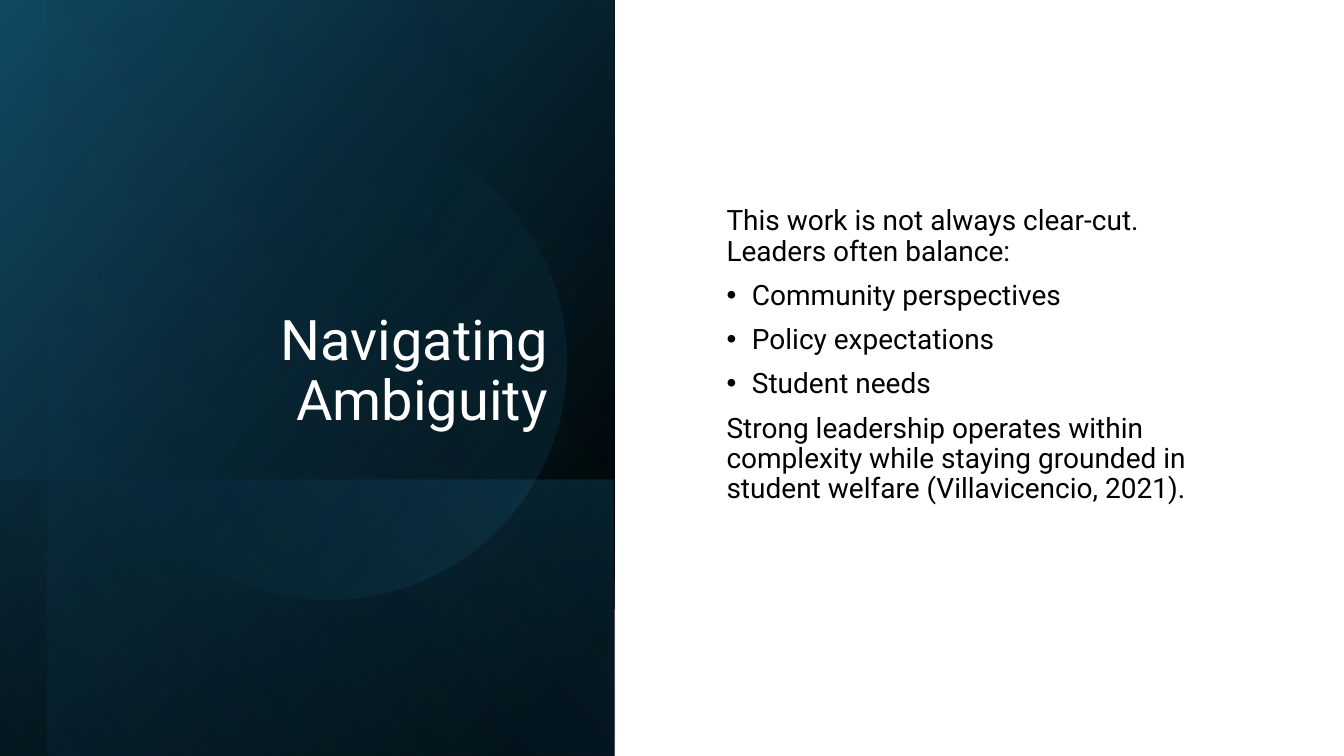
"""Build the Navigating Ambiguity slide."""
from dataclasses import dataclass

from lxml.etree import SubElement
from pptx import Presentation
from pptx.dml.color import RGBColor
from pptx.enum.shapes import MSO_SHAPE as Shape
from pptx.enum.text import MSO_ANCHOR as Anchor, PP_ALIGN as Align
from pptx.oxml.ns import qn
from pptx.util import Cm, Pt


@dataclass(frozen=True)
class Theme:
    font: str = "Roboto"
    black: str = "000000"
    white: str = "FFFFFF"
    navy: str = "104862"
    teal: str = "156082"
    sky: str = "46B1E1"
    title_size: int = 40
    body_size: int = 20
    line_spacing: float = 0.9
    space_before: int = 10


THEME = Theme()
TITLE = "Navigating Ambiguity"
BODY = [
    ("This work is not always clear-cut. Leaders often balance:", False),
    ("Community perspectives", True),
    ("Policy expectations", True),
    ("Student needs", True),
    ("Strong leadership operates within complexity while staying grounded "
     "in student welfare (Villavicencio, 2021).", False),
]
TITLE_BOX = (2.29, 1.63, 11.76, 9.4)
BODY_BOX = (18.06, 1.8, 13.51, 15.42)
BODY_BOTTOM_INSET = 1.22
BULLET_INDENT = 0.64

# Each panel: shape, box, rotation, mirrored, angle, stops (position, colour, opacity)
PANELS = [
    (Shape.RECTANGLE, (-1.78, 1.78, 19.05, 15.49), 90, True, 50,
     [(8, THEME.black, 100), (100, THEME.navy, 100)]),
    (Shape.RECTANGLE, (4.24, 7.82, 6.96, 15.49), 90, True, 130,
     [(2, THEME.teal, 29), (100, THEME.black, 30)]),
    (Shape.RECTANGLE, (-1.17, 2.36, 19.05, 14.3), 90, True, 130,
     [(0, THEME.black, 0), (99, THEME.teal, 11)]),
    (Shape.OVAL, (2.29, 3.12, 11.99, 11.99), 101.6, False, 290,
     [(39, THEME.teal, 0), (100, THEME.sky, 15)]),
]


def add_panel(page, kind, box, rotation, mirrored, angle, stops):
    panel = page.shapes.add_shape(kind, *map(Cm, box))
    panel.shadow.inherit = False
    panel.line.fill.background()
    panel.rotation = rotation
    if mirrored:
        panel._element.spPr.find(qn("a:xfrm")).set("flipH", "1")
    panel.fill.gradient()
    gradient = panel._element.spPr.find(qn("a:gradFill"))
    gradient.set("rotWithShape", "1")
    for child in list(gradient):
        gradient.remove(child)
    stop_list = SubElement(gradient, qn("a:gsLst"))
    for position, color, opacity in stops:
        stop = SubElement(stop_list, qn("a:gs"), pos=str(position * 1000))
        tint = SubElement(stop, qn("a:srgbClr"), val=color)
        SubElement(tint, qn("a:alpha"), val=str(opacity * 1000))
    SubElement(gradient, qn("a:lin"), ang=str(angle * 60000), scaled="0")


def add_text_frame(page, box, anchor):
    frame = page.shapes.add_textbox(*map(Cm, box)).text_frame
    frame.word_wrap = True
    frame.vertical_anchor = anchor
    return frame


def add_bullet(para):
    props = para._p.get_or_add_pPr()
    props.set("marL", str(Cm(BULLET_INDENT)))
    props.set("indent", str(-Cm(BULLET_INDENT)))
    SubElement(props, qn("a:buFont"), typeface="Arial")
    SubElement(props, qn("a:buChar"), char="•")


def style(para, size, color):
    para.line_spacing = THEME.line_spacing
    for span in para.runs:
        span.font.name = THEME.font
        span.font.size = Pt(size)
        span.font.color.rgb = RGBColor.from_string(color)


def main():
    deck = Presentation()
    deck.slide_width, deck.slide_height = Cm(33.87), Cm(19.05)
    page = deck.slides.add_slide(deck.slide_layouts[6])

    for panel in PANELS:
        add_panel(page, *panel)

    title = add_text_frame(page, TITLE_BOX, Anchor.BOTTOM)
    title.text = TITLE
    title.paragraphs[0].alignment = Align.RIGHT
    style(title.paragraphs[0], THEME.title_size, THEME.white)

    body = add_text_frame(page, BODY_BOX, Anchor.MIDDLE)
    body.margin_bottom = Cm(BODY_BOTTOM_INSET)
    for index, (text, bulleted) in enumerate(BODY):
        para = body.add_paragraph() if index else body.paragraphs[0]
        para.text = text
        if bulleted:
            add_bullet(para)
        if index:
            para.space_before = Pt(THEME.space_before)
        style(para, THEME.body_size, THEME.black)

    deck.save("out.pptx")


if __name__ == "__main__":
    main()
